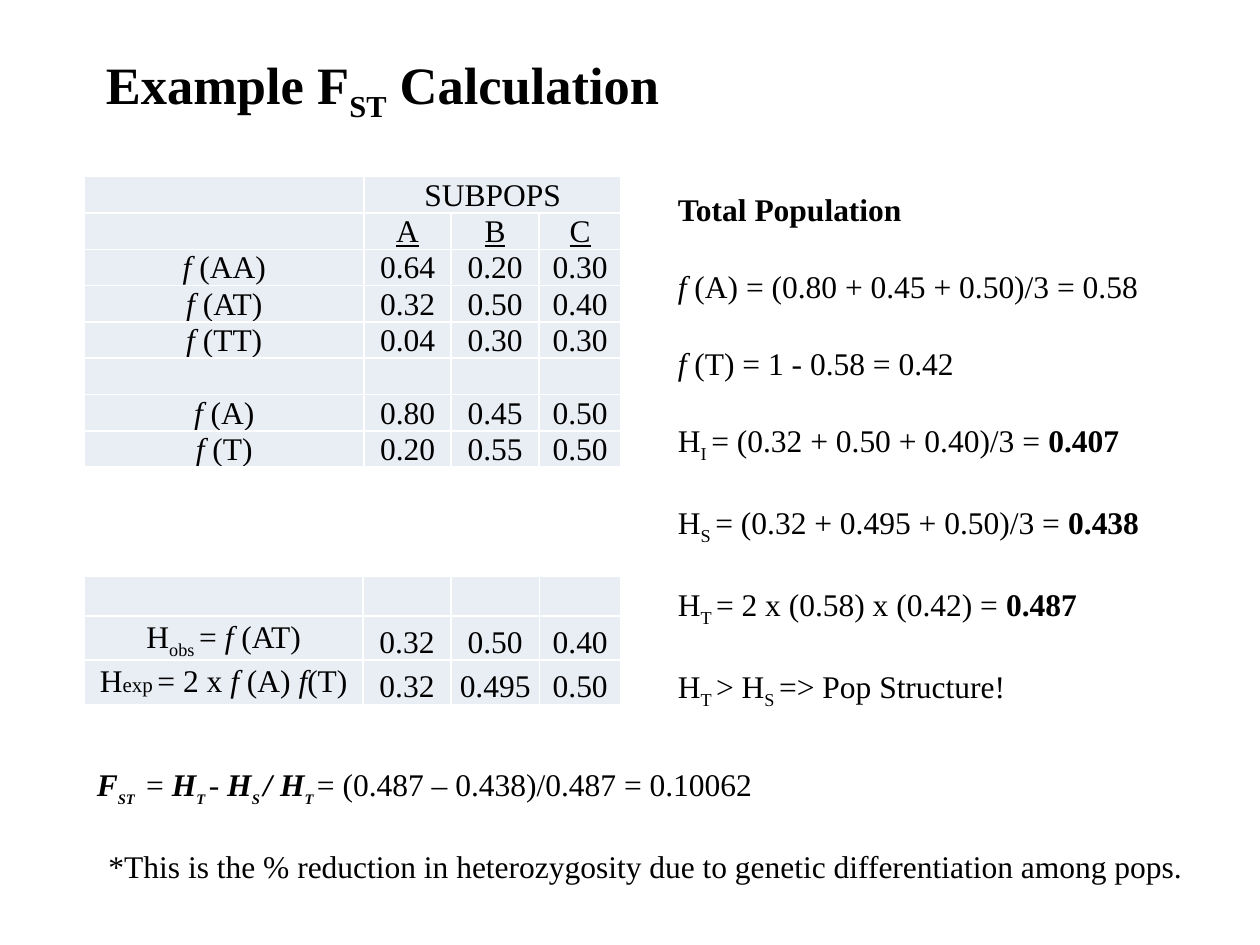
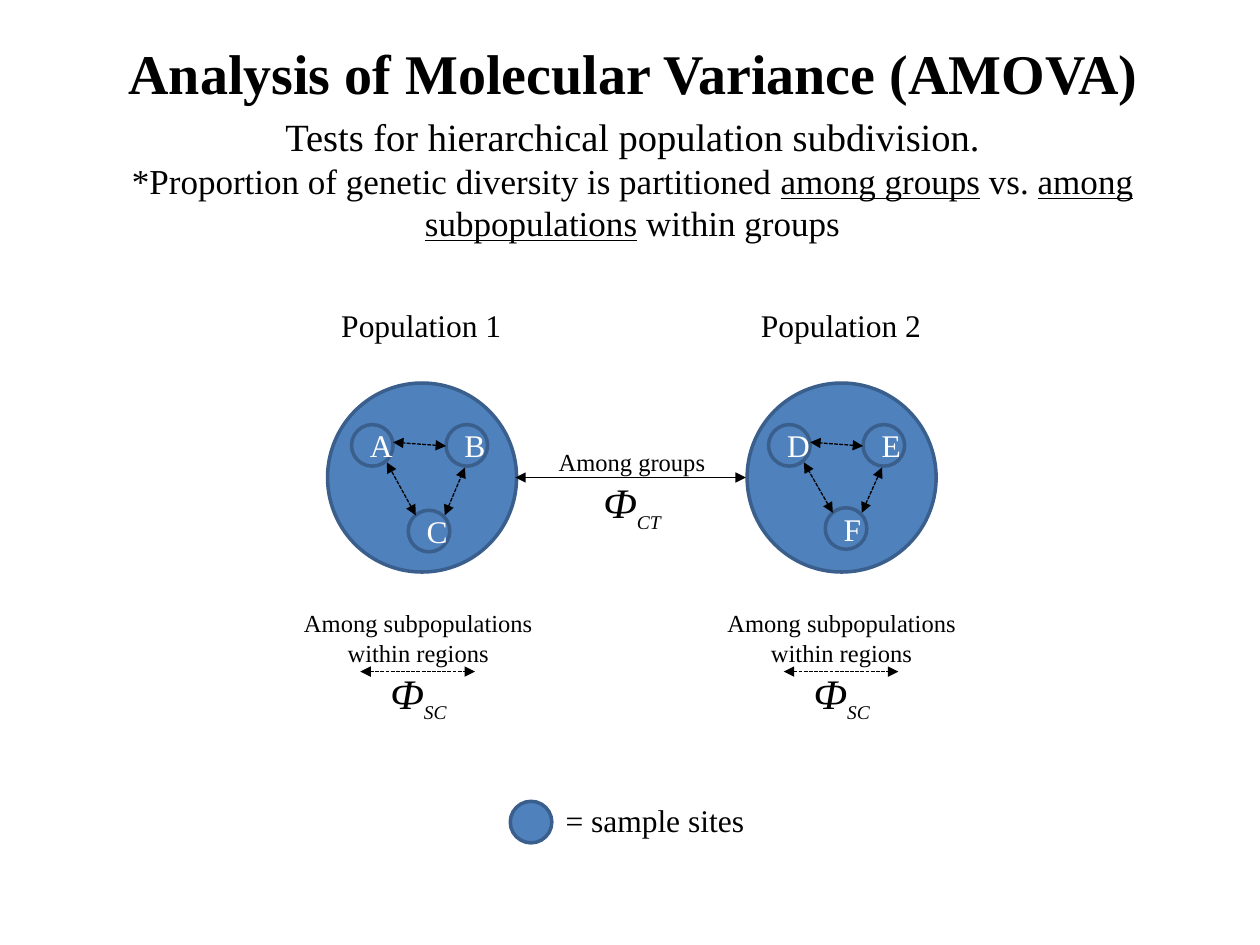
from lxml.etree import SubElement
from pptx import Presentation
from pptx.dml.color import RGBColor
from pptx.enum.dml import MSO_LINE
from pptx.enum.shapes import MSO_CONNECTOR, MSO_SHAPE
from pptx.enum.text import MSO_ANCHOR, MSO_AUTO_SIZE, PP_ALIGN
from pptx.oxml.ns import qn
from pptx.util import Inches, Pt

FONT = "Times New Roman"
INK, WHITE, CELL, DISC, RIM = "000000", "FFFFFF", "E9EDF4", "4F81BD", "3A5F8C"
LEFT, CENTER = PP_ALIGN.LEFT, PP_ALIGN.CENTER
BLANK_LINE = 22.3  # points between spaced paragraphs

# A paragraph is a string or a list of runs; a run is a string or (text, flags).
# Flags: b bold, i italic, u underline, s subscript, c small capitals, t tiny.
FST_TITLE = ["Example F", ("ST", "s"), " Calculation"]


def frequency(genotype):
    return [("f ", "i"), f"({genotype})"]


GENOTYPES = [
    ["", "SUBPOPS", "", ""],
    ["", [("A", "u")], [("B", "u")], [("C", "u")]],
    [frequency("AA"), "0.64", "0.20", "0.30"],
    [frequency("AT"), "0.32", "0.50", "0.40"],
    [frequency("TT"), "0.04", "0.30", "0.30"],
    ["", "", "", ""],
    [frequency("A"), "0.80", "0.45", "0.50"],
    [frequency("T"), "0.20", "0.55", "0.50"],
]
HETEROZYGOSITY = [
    ["", "", "", ""],
    [["H", ("obs ", "s"), "= ", ("f ", "i"), "(AT)"], "0.32", "0.50", "0.40"],
    [["H", ("exp", "t"), (" ", "s"), "= 2 x ", ("f ", "i"), "(A) ", ("f", "i"), "(T)"],
     "0.32", "0.495", "0.50"],
]
TOTAL_POPULATION = [
    [("Total Population", "b")],
    [*frequency("A"), " = (0.80 + 0.45 + 0.50)/3 = 0.58"],
    [*frequency("T"), " = 1 - 0.58 = 0.42"],
    ["H", ("I ", "s"), "= (0.32 + 0.50 + 0.40)/3 = ", ("0.407", "b")],
    ["H", ("S ", "s"), "= (0.32 + 0.495 + 0.50)/3 = ", ("0.438", "b")],
    ["H", ("T ", "s"), "= 2 x (0.58) x (0.42) = ", ("0.487", "b")],
    ["H", ("T ", "s"), "> H", ("S ", "s"), "=> Pop Structure!"],
]
FST_RESULT = [
    [("F", "bi"), ("st ", "bisc"), " = ", ("H", "bi"), ("t ", "bisc"), "- ",
     ("H", "bi"), ("s ", "bisc"), ("/ H", "bi"), ("t ", "bisc"),
     "= (0.487 – 0.438)/0.487 = 0.10062"],
    "*This is the % reduction in heterozygosity due to genetic differentiation among pops.",
]

AMOVA_TITLE = "Analysis of Molecular Variance (AMOVA)"
AMOVA_INTRO = [
    "Tests for hierarchical population subdivision.",
    ["*Proportion of genetic diversity is partitioned ", ("among groups", "u"), " vs. ",
     ("among subpopulations", "u"), " within groups"],
]
# name, left of its disc, left of its sites, drop of the lowest site, left of caption, sites
POPULATIONS = [
    ("Population 1", 2.6, 2.79, 0.68, 2.29, "ABC"),
    ("Population 2", 5.93, 6.1, 0.66, 5.65, "DEF"),
]
DISC_TOP, DISC_SIZE = 3.04, 1.5
SITE_TOP, SITE_SIZE = 3.37, 0.33
CAPTION_TOP, CAPTION_WIDTH = 4.78, 2.06


def phi(subscript):
    return [("Ф", "i"), (subscript, "isc")]


def color(hex_code):
    return RGBColor.from_string(hex_code)


def write(frame, paragraphs, sizes=(18,), ink=INK, bold=False, align=LEFT, gap=0,
          wrap=True, anchor=MSO_ANCHOR.TOP, bare=False):
    """Fill a text frame; sizes and align go by paragraph, bare drops the bullets."""
    frame.word_wrap = wrap
    frame.auto_size = MSO_AUTO_SIZE.NONE
    frame.vertical_anchor = anchor
    for index, runs in enumerate(paragraphs):
        paragraph = frame.add_paragraph() if index else frame.paragraphs[0]
        paragraph.alignment = align[index] if isinstance(align, tuple) else align
        paragraph.space_before = Pt(gap if index else 0)
        if bare:
            properties = paragraph._p.get_or_add_pPr()
            properties.set("marL", "0")
            properties.set("indent", "0")
            SubElement(properties, qn("a:buNone"))
        for part in [runs] if isinstance(runs, str) else runs:
            words, flags = (part, "") if isinstance(part, str) else part
            run = paragraph.add_run()
            run.text = words
            font = run.font
            font.name = FONT
            font.size = Pt(12 if "t" in flags else sizes[min(index, len(sizes) - 1)])
            font.color.rgb = color(ink)
            font.bold = bold or "b" in flags
            font.italic = "i" in flags
            font.underline = "u" in flags
            if "s" in flags:
                run._r.get_or_add_rPr().set("baseline", "-25000")
            if "c" in flags:
                run._r.get_or_add_rPr().set("cap", "small")


def place(shape, box):
    shape.left, shape.top, shape.width, shape.height = map(Inches, box)


def add_slide(deck, title, title_box, title_size, body, body_box, **body_format):
    slide = deck.slides.add_slide(deck.slide_layouts[1])
    place(slide.shapes.title, title_box)
    write(slide.shapes.title.text_frame, [title], sizes=(title_size,), bold=True,
          wrap=False, anchor=MSO_ANCHOR.MIDDLE)
    outline = slide.placeholders[1]
    place(outline, body_box)
    write(outline.text_frame, body, bare=True, **body_format)
    return slide


def add_text(slide, box, paragraphs, **text_format):
    textbox = slide.shapes.add_textbox(*map(Inches, box))
    write(textbox.text_frame, paragraphs, **text_format)


def add_grid(slide, left, top, column_widths, row_heights, rows):
    grid = slide.shapes.add_table(
        len(rows), len(column_widths), Inches(left), Inches(top),
        Inches(sum(column_widths)), Inches(sum(row_heights))).table
    grid.first_row = grid.horz_banding = False
    for column, width in zip(grid.columns, column_widths):
        column.width = Inches(width)
    for row, height, entries in zip(grid.rows, row_heights, rows):
        row.height = Inches(height)
        for cell, entry in zip(row.cells, entries):
            cell.fill.solid()
            cell.fill.fore_color.rgb = color(CELL)
            cell.margin_left = cell.margin_right = cell.margin_top = Inches(0.01)
            cell.margin_bottom = 0
            cell.vertical_anchor = MSO_ANCHOR.BOTTOM
            paragraph = cell.text_frame.paragraphs[0]
            paragraph.alignment = CENTER
            write_cell(cell, entry)
    return grid


def write_cell(cell, entry):
    anchor = cell.vertical_anchor
    write(cell.text_frame, [entry], align=CENTER)
    cell.vertical_anchor = anchor


def add_disc(slide, left, top, size, letter=None):
    disc = slide.shapes.add_shape(MSO_SHAPE.OVAL, *map(Inches, (left, top, size, size)))
    disc.shadow.inherit = False
    disc.fill.solid()
    disc.fill.fore_color.rgb = color(DISC)
    disc.line.color.rgb = color(RIM)
    disc.line.width = Pt(2)
    if letter:
        write(disc.text_frame, [letter], ink=WHITE, align=CENTER, anchor=MSO_ANCHOR.MIDDLE)


def add_double_arrow(slide, start, end, dashed=True):
    arrow = slide.shapes.add_connector(MSO_CONNECTOR.STRAIGHT, *map(Inches, (*start, *end)))
    arrow.line.color.rgb = color(INK)
    arrow.line.width = Pt(0.75)
    if dashed:
        arrow.line.dash_style = MSO_LINE.SQUARE_DOT
    outline = arrow.line._get_or_add_ln()
    for tip in ("a:headEnd", "a:tailEnd"):
        SubElement(outline, qn(tip), type="triangle")
    SubElement(arrow._element.spPr, qn("a:effectLst"))


def add_population(slide, name, disc_left, site_left, drop, caption_left, letters):
    add_disc(slide, disc_left, DISC_TOP, DISC_SIZE)
    add_text(slide, (disc_left + 0.01, 2.38, 1.49, 0.4), [name], wrap=False)
    for letter, (dx, dy) in zip(letters, [(0, 0), (0.75, 0), (0.45, drop)]):
        add_disc(slide, site_left + dx, SITE_TOP + dy, SITE_SIZE, letter)
    for x1, y1, x2, y2 in [(0.51, drop + 0.04, 0.28, 0.3),
                           (0.75, 0.17, 0.33, 0.14),
                           (0.74, drop + 0.04, 0.9, 0.34)]:
        add_double_arrow(slide, (site_left + x1, SITE_TOP + y1),
                         (site_left + x2, SITE_TOP + y2))
    add_text(slide, (caption_left, CAPTION_TOP, CAPTION_WIDTH, 1.28),
             ["Among subpopulations within regions", phi("sc")], sizes=(14, 24), align=CENTER)
    arrow_y = CAPTION_TOP + 0.55
    add_double_arrow(slide, (caption_left + 0.57, arrow_y),
                     (caption_left + CAPTION_WIDTH - 0.58, arrow_y))


def build_fst_slide(deck):
    slide = add_slide(deck, FST_TITLE, (0.74, 0.39, 4.68, 0.61), 30,
                      TOTAL_POPULATION, (5.28, 1.46, 4.26, 4.04), gap=BLANK_LINE)
    genotypes = add_grid(slide, 0.67, 1.4, (2.22, 0.69, 0.7, 0.65), [2.3 / 8] * 8, GENOTYPES)
    genotypes.cell(0, 1).merge(genotypes.cell(0, 3))
    add_grid(slide, 0.67, 4.57, (2.21, 0.7, 0.7, 0.65), (0.32, 0.35, 0.35), HETEROZYGOSITY)
    add_text(slide, (0.67, 6.02, 8.91, 1.01), FST_RESULT, gap=BLANK_LINE,
             align=(LEFT, CENTER), wrap=False)


def build_amova_slide(deck):
    slide = add_slide(deck, AMOVA_TITLE, (0.92, 0.25, 8.24, 0.64), 32,
                      AMOVA_INTRO, (0.28, 0.85, 9.48, 1.14), sizes=(22, 20), align=CENTER)
    for population in POPULATIONS:
        add_population(slide, *population)
    middle = DISC_TOP + DISC_SIZE / 2
    add_double_arrow(slide, (4.09, middle), (5.92, middle), dashed=False)
    add_text(slide, (4.32, 3.5, 1.39, 0.74), ["Among groups", phi("ct")],
             sizes=(14, 24), align=CENTER, wrap=False)
    add_disc(slide, 4.05, 6.36, SITE_SIZE)
    add_text(slide, (4.39, 6.31, 1.64, 0.4), ["= sample sites"], wrap=False)


def main():
    deck = Presentation()
    deck.slide_width, deck.slide_height = Inches(10), Inches(7.5)
    build_fst_slide(deck)
    build_amova_slide(deck)
    deck.save("out.pptx")


if __name__ == "__main__":
    main()
